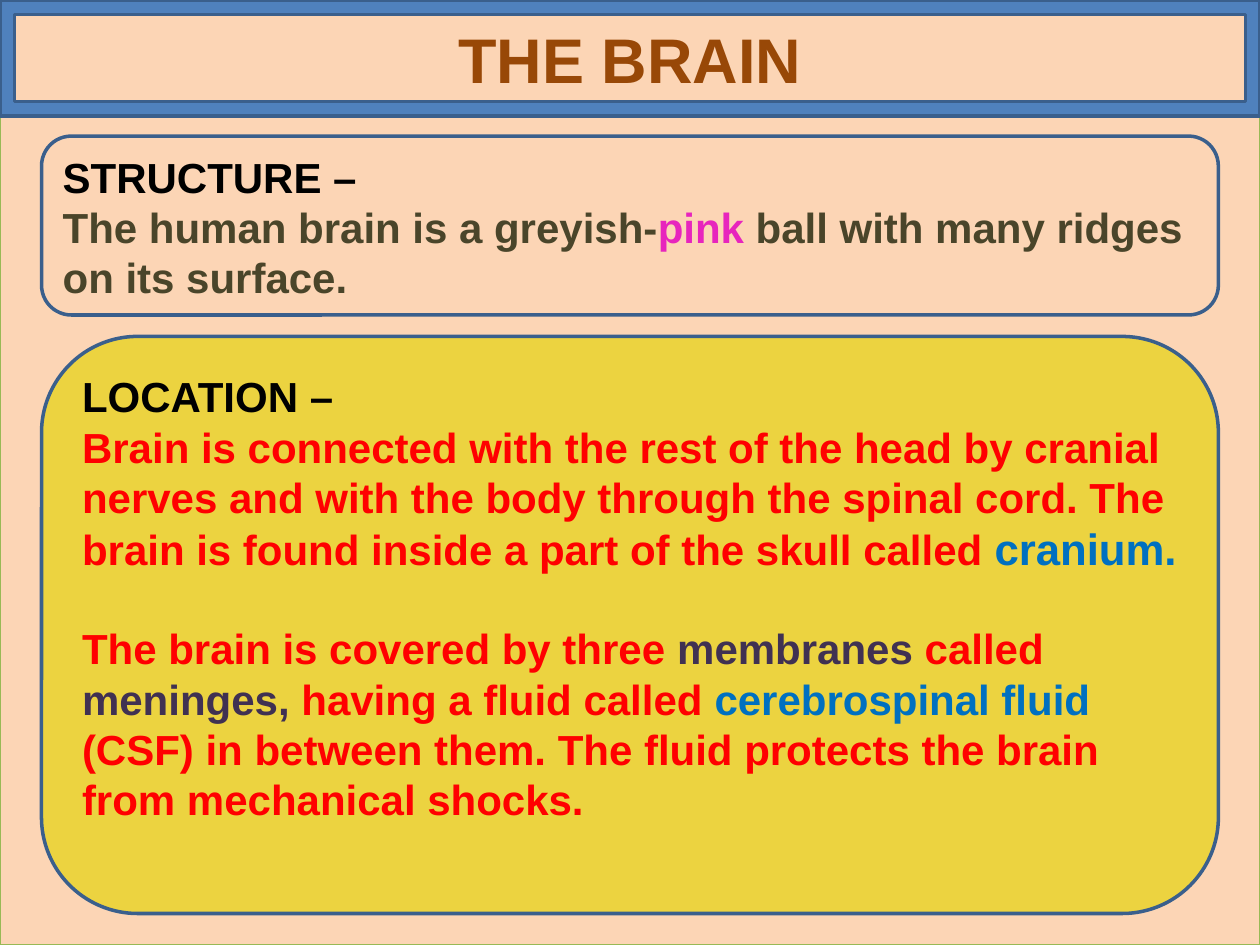
import pptx
import pptx.util
import pptx.dml.color
import pptx.enum.shapes
import pptx.enum.text

Inches = pptx.util.Inches
Pt = pptx.util.Pt
RGBColor = pptx.dml.color.RGBColor
Shape = pptx.enum.shapes.MSO_SHAPE
Anchor = pptx.enum.text.MSO_ANCHOR
Align = pptx.enum.text.PP_ALIGN

PEACH = RGBColor(0xFC, 0xD5, 0xB5)
GREEN = RGBColor(0x98, 0xB9, 0x55)
BLUE = RGBColor(0x4F, 0x81, 0xBD)
DARK_BLUE = RGBColor(0x3A, 0x5F, 0x8C)
YELLOW = RGBColor(0xEC, 0xD3, 0x40)
BROWN = RGBColor(0x98, 0x48, 0x07)
BLACK = RGBColor(0x00, 0x00, 0x00)
OLIVE = RGBColor(0x4A, 0x45, 0x2A)
PINK = RGBColor(0xE7, 0x25, 0xBD)
RED = RGBColor(0xFF, 0x00, 0x00)
SKY = RGBColor(0x00, 0x70, 0xC0)
PURPLE = RGBColor(0x40, 0x31, 0x52)

FONT = "Arial"
BODY_SIZE = 24
BODY_LINE = 27.6  # height of one body line in points


def add_panel(page, kind, area, fill, line=DARK_BLUE, width=2):
    """Add a filled, outlined shape; area is left, top, width, height in inches."""
    box = page.shapes.add_shape(kind, *map(Inches, area))
    box.shadow.inherit = False
    box.fill.solid()
    box.fill.fore_color.rgb = fill
    box.line.color.rgb = line
    box.line.width = Pt(width)
    return box


def style_paragraph(para, size, align):
    para.alignment = align
    para.font.name = FONT
    para.font.size = Pt(size)
    para.font.bold = True


def add_title(page, area, text):
    box = add_panel(page, Shape.FRAME, area, BLUE)
    box.text_frame.vertical_anchor = Anchor.MIDDLE
    para = box.text_frame.paragraphs[0]
    para.text = text
    style_paragraph(para, 36, Align.CENTER)
    para.runs[0].font.color.rgb = BROWN


def add_section(page, area, fill, heading, passages):
    """Add a rounded panel: a heading, then passages of (text, colour[, size])."""
    box = add_panel(page, Shape.ROUNDED_RECTANGLE, area, fill)
    frame = box.text_frame
    frame.word_wrap = True
    frame.vertical_anchor = Anchor.TOP
    frame.margin_right = Inches(0.08)
    for index, spans in enumerate([[(heading, BLACK)], *passages]):
        para = frame.paragraphs[0] if index == 0 else frame.add_paragraph()
        style_paragraph(para, BODY_SIZE, Align.LEFT)
        if index > 1:
            para.space_before = Pt(BODY_LINE)
        for text, colour, *size in spans:
            span = para.add_run()
            span.text = text
            span.font.color.rgb = colour
            if size:
                span.font.size = Pt(size[0])


STRUCTURE = [
    [
        ("The human brain is a greyish-", OLIVE),
        ("pink", PINK),
        (" ball with many ridges on its surface.", OLIVE),
    ],
]
LOCATION = [
    [
        ("Brain is connected with the rest of the head by cranial nerves and "
         "with the body through the spinal cord. The brain is found inside a "
         "part of the skull called ", RED),
        ("cranium.", SKY, 25),
    ],
    [
        ("The brain is covered by three ", RED),
        ("membranes", PURPLE),
        (" called ", RED),
        ("meninges,", PURPLE),
        (" having a fluid called ", RED),
        ("cerebrospinal fluid ", SKY),
        ("(CSF) in between them. The fluid protects the brain from "
         "mechanical shocks.", RED),
    ],
]


def main():
    deck = pptx.Presentation()
    deck.slide_width = Inches(10)
    deck.slide_height = Inches(7.5)
    page = deck.slides.add_slide(deck.slide_layouts[6])

    # Backdrop and title
    add_panel(page, Shape.RECTANGLE, (0, 0, 10, 7.5), PEACH, GREEN, 0.75)
    add_title(page, (0, 0, 10, 0.92), "THE BRAIN")

    # Text sections
    add_section(page, (0.33, 1.08, 9.34, 1.42), PEACH, "STRUCTURE –", STRUCTURE)
    add_section(page, (0.33, 2.67, 9.34, 4.58), YELLOW, "LOCATION –", LOCATION)

    deck.save("out.pptx")


if __name__ == "__main__":
    main()
